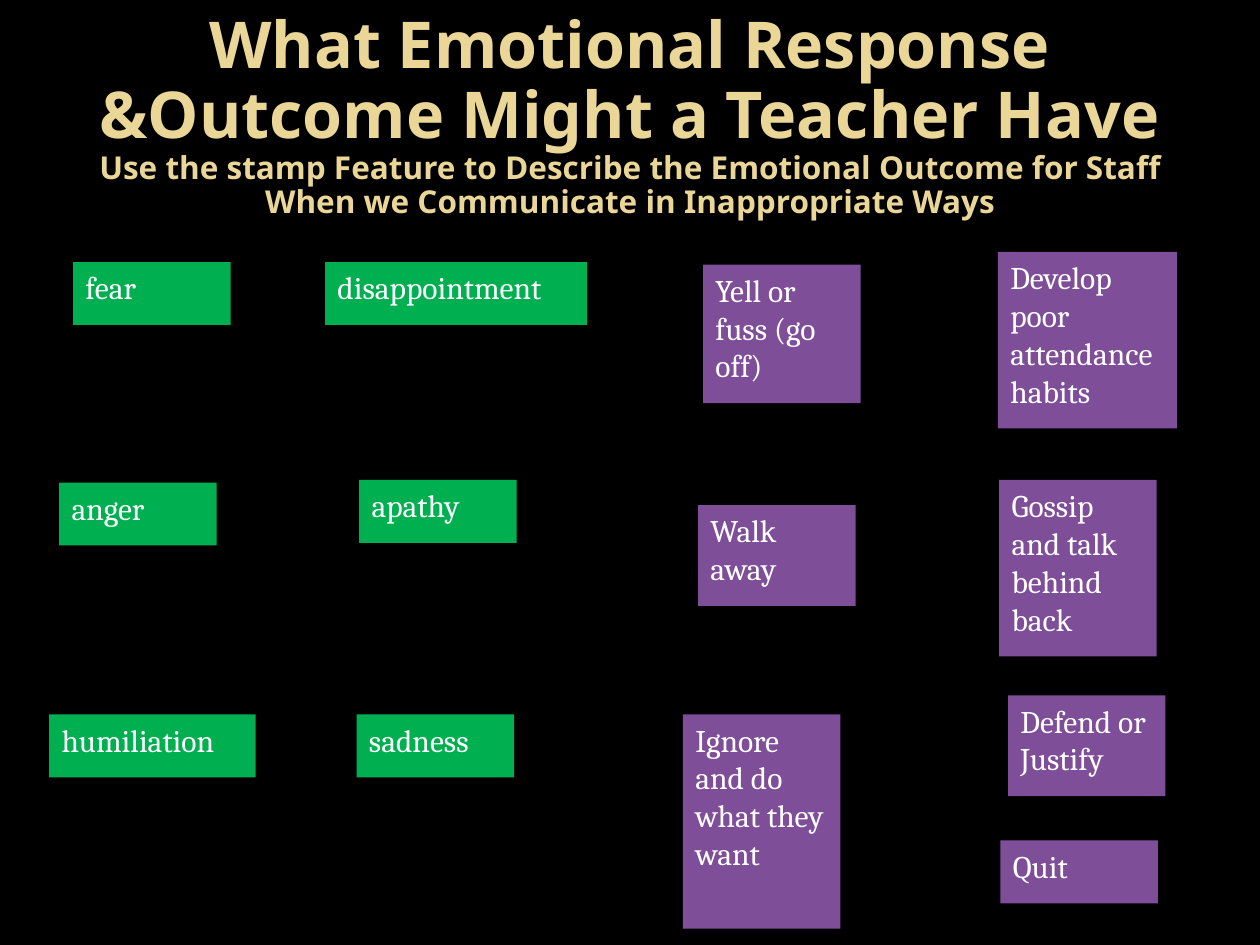
from pptx import Presentation
from pptx.dml.color import RGBColor
from pptx.enum.shapes import MSO_SHAPE as Shape
from pptx.enum.text import MSO_ANCHOR as Anchor, MSO_AUTO_SIZE as AutoSize, PP_ALIGN as Align
from pptx.util import Inches, Pt

COLORS = {
    "background": "000000",
    "title": "EAD696",
    "title_end": "E7D081",
    "emotion": "00B050",
    "outcome": "7E4E99",
    "label": "FFFFFF",
}
STAMP_WIDTH = 1.25
PADDING, LINE_HEIGHT = 0.1, 0.3

# Each stamp: text, left, top, number of lines, width
EMOTIONS = [
    ("fear", 0.58, 2.08, 1, STAMP_WIDTH),
    ("anger", 0.47, 3.83, 1, STAMP_WIDTH),
    ("humiliation", 0.39, 5.67, 1, 1.64),
    ("sadness", 2.83, 5.67, 1, STAMP_WIDTH),
    ("apathy", 2.85, 3.81, 1, STAMP_WIDTH),
    ("disappointment", 2.58, 2.08, 1, 2.08),
]
OUTCOMES = [
    ("Yell or fuss (go off)", 5.58, 2.1, 3, STAMP_WIDTH),
    ("Walk away", 5.54, 4.01, 2, STAMP_WIDTH),
    ("Ignore and do what they want", 5.42, 5.67, 5, STAMP_WIDTH),
    ("Develop poor attendance habits", 7.92, 2, 4, 1.42),
    ("Gossip and talk behind back", 7.93, 3.81, 4, STAMP_WIDTH),
    ("Defend or Justify", 8, 5.52, 2, STAMP_WIDTH),
    ("Quit", 7.94, 6.67, 1, STAMP_WIDTH),
]


def color(name):
    return RGBColor.from_string(COLORS[name])


def add_title_run(paragraph, text, size):
    run = paragraph.add_run()
    run.text = text
    font = run.font
    font.name, font.size, font.bold = "Noto Sans", Pt(size), True
    font.fill.gradient()
    font.fill.gradient_angle = 280
    start, end = font.fill.gradient_stops
    start.color.rgb, start.position = color("title"), 0.73
    end.color.rgb, end.position = color("title_end"), 1


def fill_title(title):
    title.left, title.top = Inches(0.5), Inches(0.3)
    title.width, title.height = Inches(9), Inches(1.25)
    frame = title.text_frame
    frame.word_wrap = True
    frame.auto_size = AutoSize.NONE
    frame.vertical_anchor = Anchor.MIDDLE
    heading = frame.paragraphs[0]
    heading.alignment = Align.CENTER
    heading.line_spacing = 0.9
    add_title_run(heading, "What Emotional Response &Outcome Might a Teacher Have", 36.9)
    heading.add_line_break()
    add_title_run(
        heading,
        "Use the stamp Feature to Describe the Emotional Outcome for Staff "
        "When we Communicate in Inappropriate Ways",
        18,
    )


def add_stamp(slide, fill, text, left, top, lines, width):
    height = 2 * PADDING + lines * LINE_HEIGHT - 0.1 + 0.1 * (lines > 0)
    stamp = slide.shapes.add_shape(
        Shape.RECTANGLE, Inches(left), Inches(top), Inches(width), Inches(height)
    )
    stamp.shadow.inherit = False
    stamp.fill.solid()
    stamp.fill.fore_color.rgb = color(fill)
    stamp.line.fill.background()
    frame = stamp.text_frame
    frame.word_wrap = True
    frame.vertical_anchor = Anchor.TOP
    label = frame.paragraphs[0]
    label.text = text
    label.alignment = Align.LEFT
    label.font.name, label.font.size = "Cambria", Pt(18)
    label.font.color.rgb = color("label")


def main():
    prs = Presentation()
    prs.slide_width, prs.slide_height = Inches(10), Inches(7.5)
    slide = prs.slides.add_slide(prs.slide_layouts[5])
    slide.background.fill.solid()
    slide.background.fill.fore_color.rgb = color("background")

    # Heading
    fill_title(slide.shapes.title)

    # Emotional responses on the left, outcomes on the right
    for fill, stamps in (("emotion", EMOTIONS), ("outcome", OUTCOMES)):
        for stamp in stamps:
            add_stamp(slide, fill, *stamp)

    prs.save("out.pptx")


if __name__ == "__main__":
    main()
